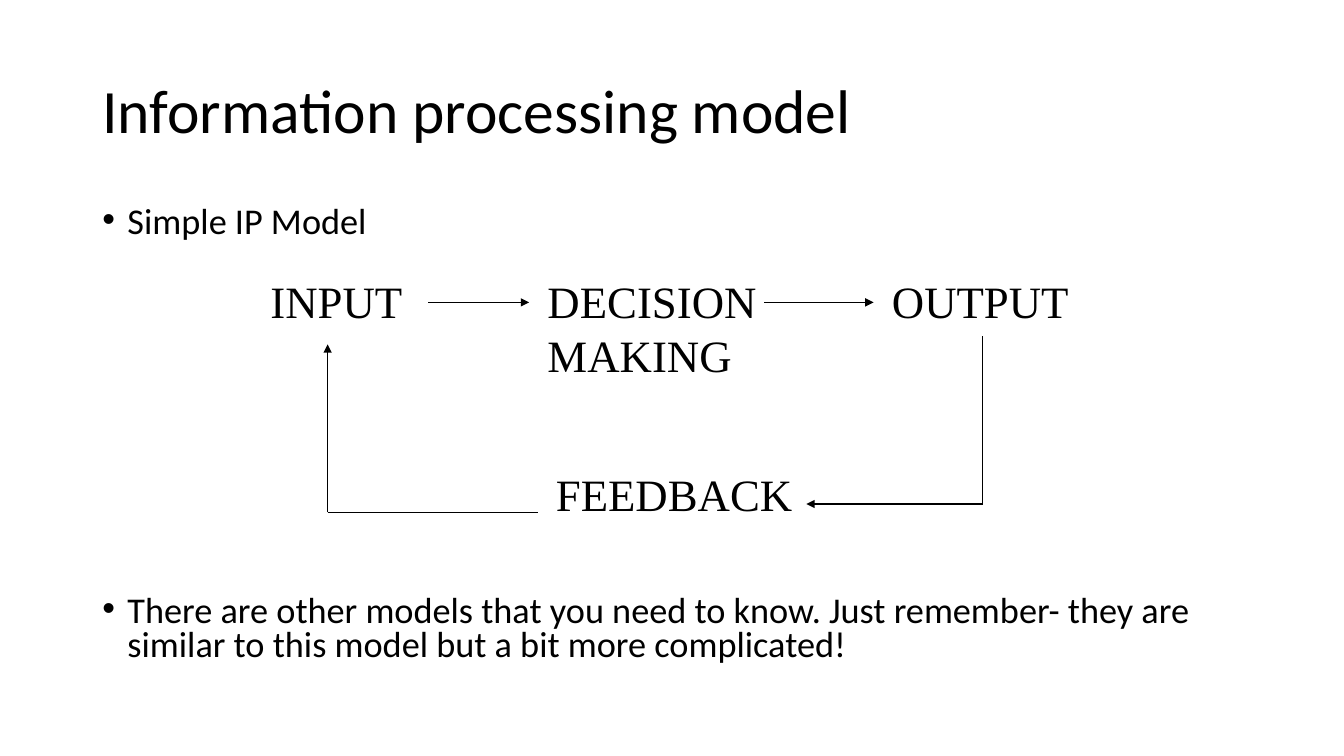
import pptx
import pptx.dml.color
import pptx.enum.shapes
import pptx.enum.text
import pptx.oxml
import pptx.oxml.ns
import pptx.util

Pt = pptx.util.Pt
BLACK = "000000"


def format_text(shape, font_name, size, line_spacing=1.0):
    frame = shape.text_frame
    frame.word_wrap = True
    frame.auto_size = pptx.enum.text.MSO_AUTO_SIZE.NONE
    for paragraph in frame.paragraphs:
        paragraph.alignment = pptx.enum.text.PP_ALIGN.LEFT
        paragraph.line_spacing = line_spacing
        for run in paragraph.runs:
            run.font.name = font_name
            run.font.size = Pt(size)
            run.font.color.rgb = pptx.dml.color.RGBColor.from_string(BLACK)


def append_xml(parent, tag, attributes=""):
    """Append an empty DrawingML element to parent."""
    namespace = pptx.oxml.ns.nsdecls("a")
    parent.append(pptx.oxml.parse_xml(f"<a:{tag} {namespace} {attributes}/>"))


presentation = pptx.Presentation()
presentation.slide_width = Pt(960)
presentation.slide_height = Pt(540)
slide = presentation.slides.add_slide(presentation.slide_layouts[5])

title = slide.shapes.title
title.left, title.top, title.width, title.height = Pt(66), Pt(28.75), Pt(828), Pt(104.4)
title.text_frame.text = "Information processing model"
title.text_frame.vertical_anchor = pptx.enum.text.MSO_ANCHOR.MIDDLE
format_text(title, "Calibri", 44, 0.9)

body = slide.shapes.add_textbox(Pt(66), Pt(143.75), Pt(828), Pt(342.6))
body.text_frame.text = (
    "Simple IP Model\n"
    "There are other models that you need to know. Just remember- they are "
    "similar to this model but a bit more complicated!"
)
format_text(body, "Calibri", 25.9, 0.8)
for paragraph in body.text_frame.paragraphs:
    properties = paragraph._p.get_or_add_pPr()
    properties.set("marL", str(Pt(18)))
    properties.set("indent", str(Pt(-18)))
    append_xml(properties, "buFont", 'typeface="Arial"')
    append_xml(properties, "buChar", 'char="•"')
# The gap between the two bullets leaves room for the diagram.
body.text_frame.paragraphs[1].space_before = Pt(253)

stages = [
    ("INPUT", 186, 192, 168, 45),
    ("DECISION MAKING", 384, 192, 174, 84),
    ("OUTPUT", 630, 192, 168, 45),
    ("FEEDBACK", 390, 330, 186, 45),
]
for label, left, top, width, height in stages:
    stage = slide.shapes.add_textbox(Pt(left), Pt(top), Pt(width), Pt(height))
    stage.text_frame.text = label
    format_text(stage, "Times New Roman", 32)

flow_lines = [
    (306, 216, 378, 216, True),
    (546, 216, 624, 216, True),
    (234, 366, 234, 246, True),
    (234, 366, 384, 366, False),
    (702, 360, 576, 360, True),
    (702, 360, 702, 240, False),
]
for start_x, start_y, end_x, end_y, has_arrowhead in flow_lines:
    connector = slide.shapes.add_connector(
        pptx.enum.shapes.MSO_CONNECTOR.STRAIGHT,
        Pt(start_x), Pt(start_y), Pt(end_x), Pt(end_y),
    )
    connector.line.width = Pt(0.75)
    connector.line.color.rgb = pptx.dml.color.RGBColor.from_string(BLACK)
    if has_arrowhead:
        append_xml(connector.line._get_or_add_ln(), "tailEnd", 'type="triangle"')
    append_xml(connector._element.spPr, "effectLst")

presentation.save("out.pptx")
